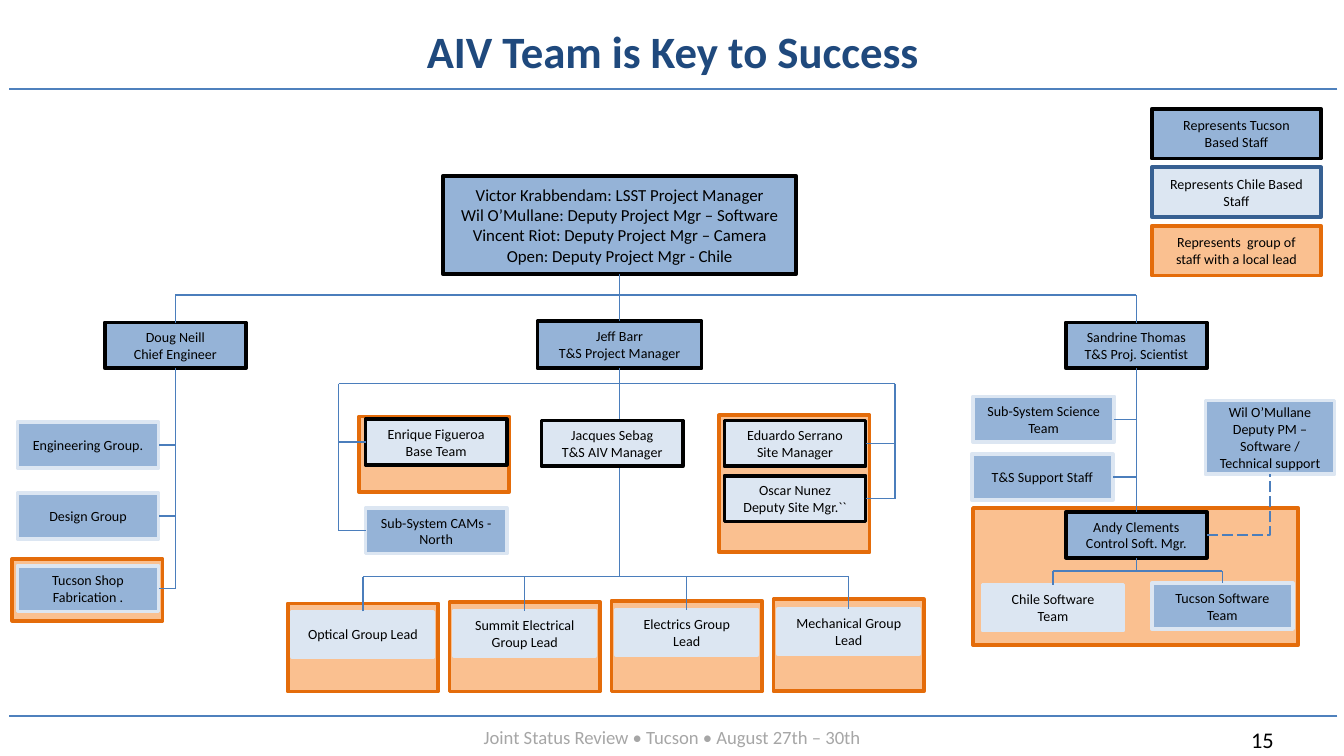
from lxml import etree
from pptx import Presentation
from pptx.dml.color import RGBColor
from pptx.enum.dml import MSO_LINE
from pptx.enum.shapes import MSO_CONNECTOR, MSO_SHAPE
from pptx.enum.text import MSO_ANCHOR, PP_ALIGN
from pptx.oxml.ns import qn
from pptx.util import Inches, Pt

RECTANGLE = MSO_SHAPE.RECTANGLE
STRAIGHT, ELBOW = MSO_CONNECTOR.STRAIGHT, MSO_CONNECTOR.ELBOW
LONG_DASH = MSO_LINE.LONG_DASH
MIDDLE = MSO_ANCHOR.MIDDLE
LEFT, CENTER = PP_ALIGN.LEFT, PP_ALIGN.CENTER
TOP_SIDE, LEFT_SIDE, BOTTOM_SIDE, RIGHT_SIDE = range(4)

BLACK = RGBColor(0x00, 0x00, 0x00)
NAVY = RGBColor(0x1F, 0x49, 0x7D)
GRAY = RGBColor(0xA6, 0xA6, 0xA6)
RULE = RGBColor(0x4F, 0x81, 0xBD)
LINK = RGBColor(0x4B, 0x7E, 0xBC)
BLUE = RGBColor(0x95, 0xB3, 0xD7)
PALE = RGBColor(0xDC, 0xE6, 0xF2)
STEEL = RGBColor(0x37, 0x60, 0x92)
PEACH = RGBColor(0xFA, 0xC0, 0x90)
ORANGE = RGBColor(0xE4, 0x6C, 0x0A)

FONT = "Calibri"
deck = Presentation()
deck.slide_width = Inches(10)
deck.slide_height = deck.slide_width * 9 // 16
COLUMN = deck.slide_width / 100
ROW = deck.slide_height / 56.25
BOX_WIDTH, BOX_HEIGHT = 10.5, 3.4
# Columns of the vertical trunks and rows of the horizontal buses
ENGINEER, BASE, PROJECT, SITE, SCIENTIST = 13.05, 25.2, 46.1, 66.6, 84.55
TOP_BUS, MIDDLE_BUS, LEAD_BUS, SOFTWARE_BUS = 21.95, 28.55, 42.9, 42.5

page = deck.slides.add_slide(deck.slide_layouts[5])


def add_box(column, row, columns, rows, fill, outline, lines=(), size=7.5, inset=1):
    box = page.shapes.add_shape(RECTANGLE, int(column * COLUMN), int(row * ROW),
                                int(columns * COLUMN), int(rows * ROW))
    box.shadow.inherit = False
    box.fill.solid()
    box.fill.fore_color.rgb = fill
    box.line.color.rgb = outline
    box.line.width = Pt(2)
    frame = box.text_frame
    frame.word_wrap = True
    frame.vertical_anchor = MIDDLE
    frame.margin_left = frame.margin_right = int(inset * COLUMN)
    for number, line in enumerate(lines):
        para = frame.paragraphs[0] if number == 0 else frame.add_paragraph()
        para.alignment = CENTER
        span = para.add_run()
        span.text = line
        span.font.name, span.font.size = FONT, Pt(size)
        span.font.color.rgb = BLACK
    return box


def add_line(start, end, begin=None, finish=None, kind=STRAIGHT, color=LINK, width=0.75):
    """Draw between two (column, row) points; begin and finish are (box, side) joints."""
    line = page.shapes.add_connector(kind, int(start[0] * COLUMN), int(start[1] * ROW),
                                     int(end[0] * COLUMN), int(end[1] * ROW))
    if begin:
        line.begin_connect(*begin)
    if finish:
        line.end_connect(*finish)
    line.line.color.rgb = color
    line.line.width = Pt(width)
    etree.SubElement(line._element.spPr, qn("a:effectLst"))
    return line


# Title, rules and footer
title = page.shapes.title
title.left, title.top = int(19.2 * COLUMN), int(1.5 * ROW)
title.width, title.height = int(61.7 * COLUMN), int(4.6 * ROW)
title.text_frame.vertical_anchor = MIDDLE
para = title.text_frame.paragraphs[0]
para.alignment = CENTER
span = para.add_run()
span.text = "AIV Team is Key to Success"
span.font.name, span.font.size, span.font.bold = FONT, Pt(24), True
span.font.color.rgb = NAVY

for row in (6.6, 53.3):
    add_line((99.5, row), (0.7, row), color=RULE, width=1)

for column, columns, rows, text, size, color, alignment in (
    (5, 90, 2.7, "Joint Status Review • Tucson • August 27th – 30th", 10, GRAY, CENTER),
    (92.1, 6.2, 3, "15", 12, BLACK, LEFT),
):
    box = page.shapes.add_textbox(int(column * COLUMN), int(53.5 * ROW),
                                  int(columns * COLUMN), int(rows * ROW))
    box.text_frame.word_wrap = True
    box.text_frame.vertical_anchor = MIDDLE
    para = box.text_frame.paragraphs[0]
    para.alignment = alignment
    span = para.add_run()
    span.text = text
    span.font.name, span.font.size = FONT, Pt(size)
    span.font.color.rgb = color

# Groups with a local lead
for column, row, columns, rows in (
    (0.9, 41.6, 11.2, 4.6), (26.7, 31, 11.2, 5.6),
    (72.4, 37.8, 24.2, 10.2), (53.5, 30.9, 11.2, 10.2),
):
    add_box(column, row, columns, rows, PEACH, ORANGE)

# Legend
for number, (fill, outline, text) in enumerate((
    (BLUE, BLACK, "Represents Tucson Based Staff"),
    (PALE, STEEL, "Represents Chile Based Staff"),
    (PEACH, ORANGE, "Represents  group of staff with a local lead"),
)):
    add_box(85.7, 8.1 + 4.35 * number, 12.6, 3.7, fill, outline, [text])

# Management, with the project trunk running behind the staff boxes
managers = add_box(32.95, 13.1, 26.3, 7.3, BLUE, BLACK, [
    "Victor Krabbendam: LSST Project Manager",
    "Wil O’Mullane: Deputy Project Mgr – Software",
    "Vincent Riot: Deputy Project Mgr – Camera",
    "Open: Deputy Project Mgr - Chile",
], size=9)
project = add_box(40, 23.9, 12.2, 3.5, BLUE, BLACK, ["Jeff Barr", "T&S Project Manager"])
add_line((PROJECT, 27.4), (PROJECT, LEAD_BUS), begin=(project, BOTTOM_SIDE))
add_box(89.7, 29.8, 9.6, 5.5, BLUE, PALE,
        ["Wil O’Mullane Deputy PM – Software / Technical support"], inset=0.7)

# Staff boxes of one size
staff = {}
for name, column, row, fill, outline, lines in (
    ("engineer", 7.8, 24, BLUE, BLACK, ["Doug Neill", "Chief Engineer"]),
    ("scientist", 79.3, 24, BLUE, BLACK, ["Sandrine Thomas", "T&S Proj. Scientist"]),
    ("control", 79.3, 38.1, BLUE, BLACK, ["Andy Clements", "Control Soft. Mgr."]),
    ("assembly", 40.3, 31.3, PALE, BLACK, ["Jacques Sebag", "T&S AIV Manager"]),
    ("site", 53.9, 31.3, PALE, BLACK, ["Eduardo Serrano", "Site Manager"]),
    ("deputy", 53.9, 35.4, PALE, BLACK, ["Oscar Nunez", "Deputy Site Mgr.``"]),
    ("base", 27.2, 31.2, PALE, BLACK, ["Enrique Figueroa", "Base Team"]),
    ("cams", 27.2, 37.8, BLUE, PALE, ["Sub-System CAMs - North"]),
    ("engineering", 1.3, 31.4, BLUE, PALE, ["Engineering Group."]),
    ("design", 1.3, 36.7, BLUE, PALE, ["Design Group"]),
    ("shop", 1.3, 42.1, BLUE, PALE, ["Tucson Shop Fabrication ."]),
    ("science", 72.4, 29.5, BLUE, PALE, ["Sub-System Science Team"]),
    ("support", 72.3, 33.8, BLUE, PALE, ["T&S Support Staff"]),
    ("chile", 73.1, 43.5, PALE, PALE, ["Chile Software Team"]),
    ("tucson", 85.7, 43.4, BLUE, PALE, ["Tucson Software Team"]),
):
    staff[name] = add_box(column, row, BOX_WIDTH, BOX_HEIGHT, fill, outline, lines,
                          inset=0.5 if name == "science" else 1)

# Group leads, each hung from the lower bus
for number, text in enumerate((
    "Optical Group Lead", "Summit Electrical Group Lead",
    "Electrics Group Lead", "Mechanical Group Lead",
)):
    column = 21.4 + 12.05 * number
    group_top = 44.9 - 0.1 * number
    add_box(column, group_top, 11.2, 51.45 - group_top, PEACH, ORANGE)
    lead = add_box(column + 0.35, 45.5 - 0.07 * number, BOX_WIDTH, BOX_HEIGHT,
                   PALE, PALE, [text])
    middle = column + 0.35 + BOX_WIDTH / 2
    add_line((middle, 45.5), (middle, LEAD_BUS), begin=(lead, TOP_SIDE))

# Buses and free trunks
for start, end in (
    ((ENGINEER, TOP_BUS), (SCIENTIST, TOP_BUS)), ((BASE, MIDDLE_BUS), (SITE, MIDDLE_BUS)),
    ((27, LEAD_BUS), (63.15, LEAD_BUS)), ((78.35, SOFTWARE_BUS), (90.95, SOFTWARE_BUS)),
    ((BASE, MIDDLE_BUS), (BASE, 39.5)), ((SITE, MIDDLE_BUS), (SITE, 37.1)),
):
    add_line(start, end)

# Drops between a box and a bus
for name, side, column, row in (
    ("engineer", TOP_SIDE, ENGINEER, TOP_BUS), ("engineer", BOTTOM_SIDE, ENGINEER, 43.8),
    ("scientist", TOP_SIDE, SCIENTIST, TOP_BUS),
    ("control", BOTTOM_SIDE, SCIENTIST, SOFTWARE_BUS),
    ("chile", TOP_SIDE, 78.35, SOFTWARE_BUS), ("tucson", TOP_SIDE, 90.95, SOFTWARE_BUS),
):
    add_line((column, row), (column, row), finish=(staff[name], side))

# Drops from box to box
for column, upper, lower in ((PROJECT, managers, project),
                             (SCIENTIST, staff["scientist"], staff["control"])):
    add_line((column, TOP_BUS), (column, TOP_BUS),
             begin=(upper, BOTTOM_SIDE), finish=(lower, TOP_SIDE))

# Spurs from box sides to the trunks
for name, side, trunk in (
    ("base", LEFT_SIDE, BASE), ("cams", LEFT_SIDE, BASE),
    ("site", RIGHT_SIDE, SITE), ("deputy", RIGHT_SIDE, SITE),
    ("engineering", RIGHT_SIDE, ENGINEER), ("design", RIGHT_SIDE, ENGINEER),
    ("shop", RIGHT_SIDE, ENGINEER), ("science", RIGHT_SIDE, SCIENTIST),
    ("support", RIGHT_SIDE, SCIENTIST),
):
    row = (staff[name].top + staff[name].height / 2) / ROW
    add_line((trunk, row), (trunk, row), finish=(staff[name], side))

# Dashed support link, one bend
support_link = add_line((89.8, 39.8), (94.5, 35.3), kind=ELBOW)
support_link.line.dash_style = LONG_DASH
support_link._element.spPr.find(qn("a:prstGeom")).set("prst", "bentConnector2")

deck.save("out.pptx")
